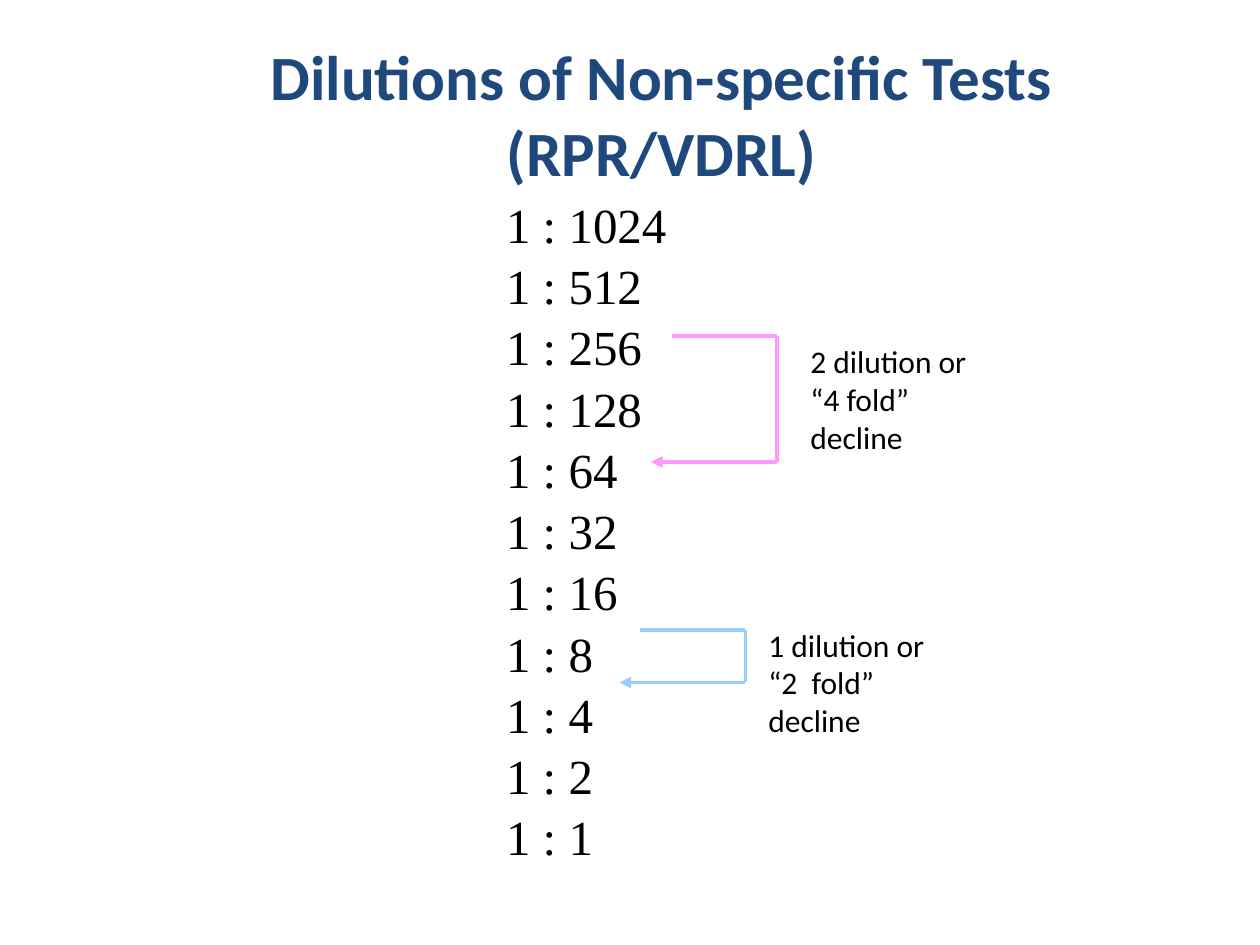
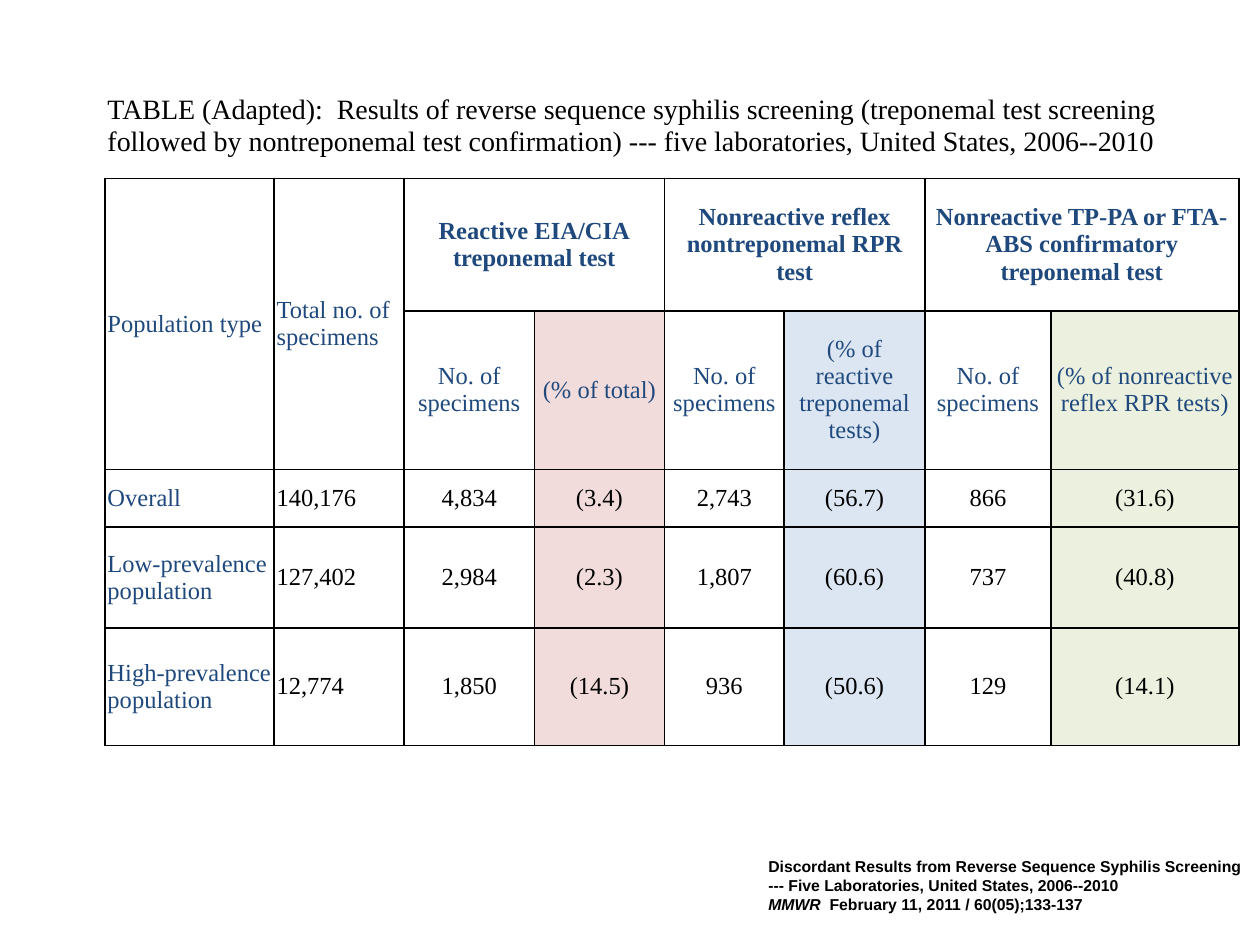
import pptx
import pptx.dml.color
import pptx.enum.shapes
import pptx.enum.text
import pptx.oxml.ns
import pptx.util
from lxml import etree

COLUMNS, ROWS = 120, 90
CELL = pptx.util.Inches(10) / COLUMNS

NAVY, BLACK, WHITE = "1F497D", "000000", "FFFFFF"
PINK, SKY = "FF99FF", "99CCFF"
SERIF, SANS, FOOTER_FONT = "Times New Roman", "Calibri", "Arial"
LEFT, CENTER = pptx.enum.text.PP_ALIGN.LEFT, pptx.enum.text.PP_ALIGN.CENTER
PLAIN_TABLE_STYLE = "{2D5ABB26-0587-4C30-8999-92F81FD0307C}"

DILUTIONS = [f"1 : {2 ** power}" for power in range(10, -1, -1)]

TABLE_COLUMNS = [16.1, 12.4, 12.4, 12.4, 11.4, 13.4, 12, 17.9]
TABLE_ROWS = [10, 12.6, 15.1, 5.5, 9.6, 11.2]
COLUMN_FILLS = {3: "F2DCDB", 5: "DCE6F2", 7: "EBF1DE"}
CAPTION = ("TABLE (Adapted):  Results of reverse sequence syphilis screening "
           "(treponemal test screening followed by nontreponemal test confirmation) "
           "--- five laboratories, United States, 2006--2010")
COUNT = "No. of specimens"
TABLE_TEXT = [
    [CAPTION] + [""] * 7,
    ["Population type", "Total no. of specimens", "Reactive EIA/CIA\vtreponemal test", "",
     "Nonreactive reflex nontreponemal RPR test", "",
     "Nonreactive TP-PA or FTA-ABS confirmatory treponemal test", ""],
    ["", "", COUNT, "(% of total)", COUNT, "(% of reactive treponemal tests)",
     COUNT, "(% of nonreactive reflex RPR tests)"],
    ["Overall", "140,176", "4,834", "(3.4)", "2,743", "(56.7)", "866", "(31.6)"],
    ["Low-prevalence population", "127,402", "2,984", "(2.3)", "1,807", "(60.6)",
     "737", "(40.8)"],
    ["High-prevalence population", "12,774", "1,850", "(14.5)", "936", "(50.6)",
     "129", "(14.1)"],
]
MERGES = [(0, 0, 0, 7), (1, 0, 2, 0), (1, 1, 2, 1), (1, 2, 1, 3), (1, 4, 1, 5), (1, 6, 1, 7)]


def grid(cells):
    return pptx.util.Emu(round(cells * CELL))


def color(hex_string):
    return pptx.dml.color.RGBColor.from_string(hex_string)


def add_element(parent, tag, **attributes):
    return etree.SubElement(parent, pptx.oxml.ns.qn(tag), attributes)


def format_para(para, font_name, size, hex_color=BLACK, bold=False, align=LEFT):
    para.alignment = align
    para.font.name = font_name
    para.font.size = pptx.util.Pt(size)
    para.font.color.rgb = color(hex_color)
    para.font.bold = bold


def place(shape, left, top, width, height):
    shape.left, shape.top = grid(left), grid(top)
    shape.width, shape.height = grid(width), grid(height)
    frame = shape.text_frame
    frame.word_wrap = True
    frame.auto_size = pptx.enum.text.MSO_AUTO_SIZE.NONE
    frame.vertical_anchor = pptx.enum.text.MSO_ANCHOR.TOP
    return frame


def add_text(page, area, text, font_name, size, bold=False):
    frame = place(page.shapes.add_textbox(0, 0, 0, 0), *area)
    frame.text = text
    for para in frame.paragraphs:
        format_para(para, font_name, size, bold=bold)
    return frame


def fill_title(page, area, text):
    frame = place(page.shapes.title, *area)
    frame.text = text
    format_para(frame.paragraphs[0], SANS, 36, NAVY, bold=True, align=CENTER)


def fill_list(page, area, items):
    frame = place(page.placeholders[1], *area)
    frame.text = "\n".join(items)
    for para in frame.paragraphs:
        properties = para._p.get_or_add_pPr()
        properties.set("marL", "0")
        properties.set("indent", "0")
        add_element(properties, "a:buNone")
        para.space_before = pptx.util.Pt(0)
        para.space_after = pptx.util.Pt(1.4)
        format_para(para, SERIF, 28)


def add_line(page, start, end, hex_color, arrow=False):
    line = page.shapes.add_connector(pptx.enum.shapes.MSO_CONNECTOR.STRAIGHT,
                                     *map(grid, start + end))
    line.line.color.rgb = color(hex_color)
    line.line.width = pptx.util.Pt(2.25)
    if arrow:
        add_element(line.line._get_or_add_ln(), "a:tailEnd", type="triangle")
    add_element(line._element.spPr, "a:effectLst")


def add_drop(page, start, end, turn, hex_color):
    """Bracket from a higher dilution to a lower one, turning at column `turn`."""
    upper, lower = (turn, start[1]), (turn, end[1])
    add_line(page, start, upper, hex_color)
    add_line(page, upper, lower, hex_color)
    add_line(page, lower, end, hex_color, arrow=True)


def draw_borders(cell, sides):
    properties = cell._tc.get_or_add_tcPr()
    for side in sides:
        border = add_element(properties, f"a:ln{side}", w=str(pptx.util.Pt(1)))
        add_element(add_element(border, "a:solidFill"), "a:srgbClr", val=BLACK)


def format_cell(cell, row, column):
    draw_borders(cell, "LRTB" if row else "B")
    cell.fill.solid()
    cell.fill.fore_color.rgb = color(COLUMN_FILLS.get(column, WHITE) if row > 1 else WHITE)
    cell.vertical_anchor = pptx.enum.text.MSO_ANCHOR.MIDDLE
    cell.margin_left = cell.margin_right = pptx.util.Inches(0.02)
    cell.margin_top = cell.margin_bottom = pptx.util.Inches(0.01)
    is_label = row in (1, 2) or (row > 2 and column == 0)
    format_para(cell.text_frame.paragraphs[0], SERIF, 14 if row else 16,
                NAVY if is_label else BLACK, bold=row == 1 and column > 1,
                align=CENTER if row and column > 1 else LEFT)


def add_results_table(page, left, top):
    frame = page.shapes.add_table(len(TABLE_ROWS), len(TABLE_COLUMNS), grid(left), grid(top),
                                  grid(sum(TABLE_COLUMNS)), grid(sum(TABLE_ROWS)))
    table = frame.table
    table.first_row = table.horz_banding = False
    table._tbl.tblPr.find(pptx.oxml.ns.qn("a:tableStyleId")).text = PLAIN_TABLE_STYLE
    for column, width in zip(table.columns, TABLE_COLUMNS):
        column.width = grid(width)
    for row, height in zip(table.rows, TABLE_ROWS):
        row.height = grid(height)
    for row, texts in enumerate(TABLE_TEXT):
        for column, text in enumerate(texts):
            cell = table.cell(row, column)
            cell.text = text
            format_cell(cell, row, column)
    for first_row, first_column, last_row, last_column in MERGES:
        table.cell(first_row, first_column).merge(table.cell(last_row, last_column))


def build_dilutions(deck):
    page = deck.slides.add_slide(deck.slide_layouts[1])
    fill_list(page, (47, 17.9, 64, 63), DILUTIONS)
    fill_title(page, (14, 3, 98, 15.6), "Dilutions of Non-specific Tests (RPR/VDRL)")
    add_drop(page, (61, 60), (59, 65), 71, SKY)
    add_drop(page, (64, 32), (62, 44), 74, PINK)
    add_text(page, (76, 32, 19, 12), "2 dilution or\v“4 fold”\vdecline", SANS, 18)
    add_text(page, (72, 59, 19, 12), "1 dilution or\v“2  fold”\vdecline", SANS, 18)


def build_results(deck):
    page = deck.slides.add_slide(deck.slide_layouts[6])
    add_results_table(page, 10, 7)
    source = add_text(page, (72, 81, 48, 7),
                      "Discordant Results from Reverse Sequence Syphilis Screening "
                      "--- Five Laboratories, United States, 2006--2010",
                      FOOTER_FONT, 9, bold=True)
    para = source.add_paragraph()
    format_para(para, FOOTER_FONT, 9, bold=True)
    journal = para.add_run()
    journal.text = "MMWR  "
    journal.font.italic = True
    para.add_run().text = "February 11, 2011 / 60(05);133-137"


def main():
    deck = pptx.Presentation()
    deck.slide_width, deck.slide_height = grid(COLUMNS), grid(ROWS)
    build_dilutions(deck)
    build_results(deck)
    deck.save("out.pptx")


if __name__ == "__main__":
    main()
